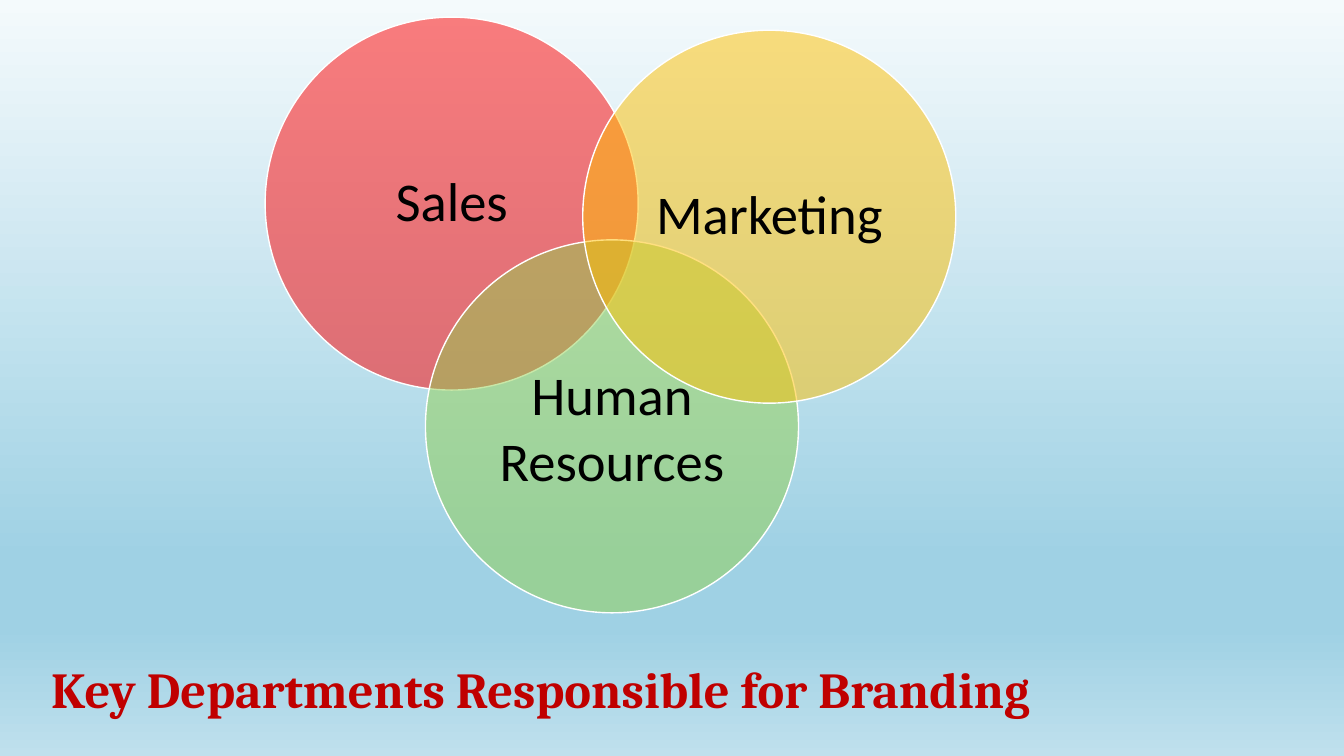
from copy import deepcopy

from lxml import etree
from pptx import Presentation
from pptx.dml.color import RGBColor
from pptx.enum.shapes import MSO_SHAPE
from pptx.enum.text import MSO_ANCHOR, PP_ALIGN
from pptx.oxml.ns import qn
from pptx.util import Inches, Pt

RECT, OVAL = MSO_SHAPE.RECTANGLE, MSO_SHAPE.OVAL
MIDDLE, BOTTOM = MSO_ANCHOR.MIDDLE, MSO_ANCHOR.BOTTOM
LEFT, CENTER = PP_ALIGN.LEFT, PP_ALIGN.CENTER

COLORS = {"sales": "FF0000", "people": "92D050", "market": "FFC000",
          "title": "C00000", "text": "000000", "line": "FFFFFF",
          "pale": "F4FAFC", "blue": "9FD1E4", "light": "BFE0ED"}
WIDTH, HEIGHT = 13.33, 7.5
SIZE = 3.7    # circle diameter
INNER = 2.62  # side of the square inside a circle


def color(name):
    return RGBColor.from_string(COLORS[name])


def write(frame, text, font="Calibri", size=39, fill="text", bold=False,
          align=CENTER, anchor=MIDDLE, inset=None, space=1.0):
    frame.word_wrap = True
    frame.vertical_anchor = anchor
    if inset is not None:
        frame.margin_left = frame.margin_right = Inches(inset)
        frame.margin_top = frame.margin_bottom = Inches(inset)
    frame.text = text
    for par in frame.paragraphs:
        par.alignment = align
        par.line_spacing = space
        for run in par.runs:
            run.font.name = font
            run.font.size = Pt(size)
            run.font.bold = bold
            run.font.color.rgb = color(fill)


class Deck:
    def __init__(self):
        self.prs = Presentation()
        self.prs.slide_width = Inches(WIDTH)
        self.prs.slide_height = Inches(HEIGHT)
        self.slide = self.prs.slides.add_slide(self.prs.slide_layouts[6])

    def shape(self, kind, x, y, w, h):
        item = self.slide.shapes.add_shape(
            kind, Inches(x), Inches(y), Inches(w), Inches(h))
        item.shadow.inherit = False
        return item

    def sky(self, stops):
        back = self.shape(RECT, 0, 0, WIDTH, HEIGHT)
        back.line.fill.background()
        fill = back.fill
        fill.gradient()
        fill.gradient_angle = 270
        items = back._element.spPr.find(qn("a:gradFill")).find(qn("a:gsLst"))
        while len(items) < len(stops):
            items.append(deepcopy(items[0]))
        for stop, (place, name) in zip(fill.gradient_stops, stops):
            stop.position = place
            stop.color.rgb = color(name)

    def text(self, text, x, y, w, h, **style):
        box = self.slide.shapes.add_textbox(
            Inches(x), Inches(y), Inches(w), Inches(h))
        write(box.text_frame, text, **style)

    def circle(self, label, x, y, name, space):
        disc = self.shape(OVAL, x, y, SIZE, SIZE)
        disc.fill.solid()
        disc.fill.fore_color.rgb = color(name)
        tint = disc._element.spPr.find(qn("a:solidFill"))[0]
        etree.SubElement(tint, qn("a:alpha"), val="50000")
        disc.line.color.rgb = color("line")
        disc.line.width = Pt(1)
        gap = (SIZE - INNER) / 2
        self.text(label, x + gap, y + gap, INNER, INNER,
                  inset=0.16, space=space)


def main():
    deck = Deck()

    # Background
    deck.sky([(0, "pale"), (0.74, "blue"), (0.83, "blue"), (1, "light")])

    # Title
    deck.text("Key Departments Responsible for Branding", 0.41, 6, 12, 1.17,
              font="Cambria", size=36, fill="title", bold=True,
              align=LEFT, anchor=BOTTOM, space=0.8)

    # Departments, back to front
    for label, x, y, name, space in [
            ("Sales", 2.63, 0.17, "sales", 0.9),
            ("Human\nResources", 4.22, 2.38, "people", 1.0),
            ("Marketing", 5.78, 0.3, "market", 0.9)]:
        deck.circle(label, x, y, name, space)

    deck.prs.save("out.pptx")


if __name__ == "__main__":
    main()
